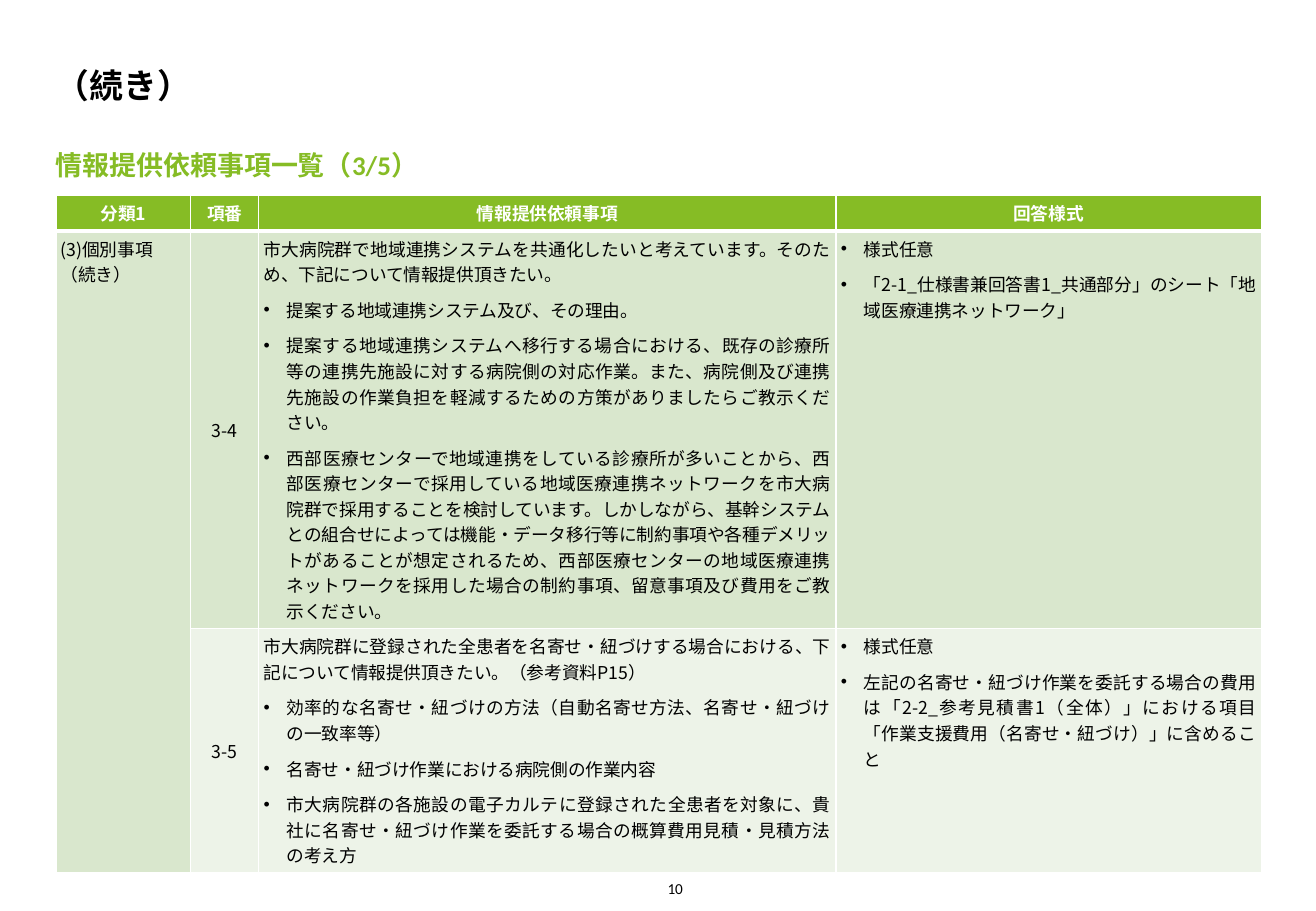
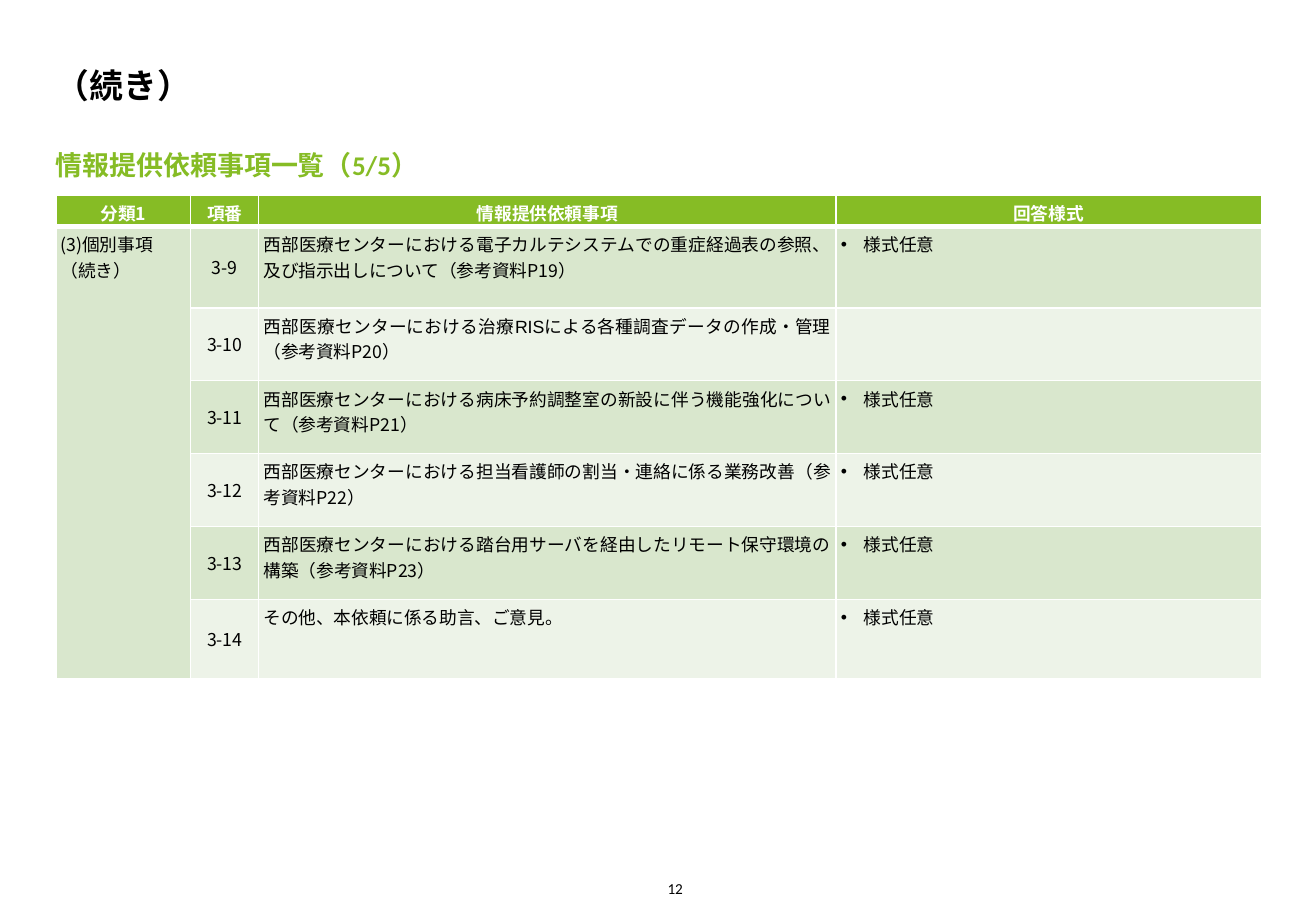
from lxml.etree import SubElement
from pptx import Presentation
from pptx.dml.color import RGBColor
from pptx.enum.text import MSO_ANCHOR as Anchor, PP_ALIGN as Align
from pptx.oxml.ns import qn
from pptx.util import Pt

# Content: each row is (number, (Arial lead, main text), bullets, answer formats)
TITLE = "（続き）"
HEADERS = ["分類1", "項番", "情報提供依頼事項", "回答様式"]
CATEGORY = ["(3)個別事項", "（続き）"]
FREE = "様式任意"

SLIDES = [
    dict(
        subtitle="情報提供依頼事項一覧（3/5）", page="10", heights=[24, 263, 185],
        rows=[
            ("3-4",
             ("", "市大病院群で地域連携システムを共通化したいと考えています。そのため、下記について情報提供頂きたい。"),
             ["提案する地域連携システム及び、その理由。",
              "提案する地域連携システムへ移行する場合における、既存の診療所等の連携先施設に対する病院側の対応作業。"
              "また、病院側及び連携先施設の作業負担を軽減するための方策がありましたらご教示ください。",
              "西部医療センターで地域連携をしている診療所が多いことから、西部医療センターで採用している"
              "地域医療連携ネットワークを市大病院群で採用することを検討しています。しかしながら、"
              "基幹システムとの組合せによっては機能・データ移行等に制約事項や各種デメリットがあることが想定されるため、"
              "西部医療センターの地域医療連携ネットワークを採用した場合の制約事項、留意事項及び費用をご教示ください。"],
             [FREE, "「2-1_仕様書兼回答書1_共通部分」のシート「地域医療連携ネットワーク」"]),
            ("3-5",
             ("", "市大病院群に登録された全患者を名寄せ・紐づけする場合における、下記について情報提供頂きたい。（参考資料P15）"),
             ["効率的な名寄せ・紐づけの方法（自動名寄せ方法、名寄せ・紐づけの一致率等）",
              "名寄せ・紐づけ作業における病院側の作業内容",
              "市大病院群の各施設の電子カルテに登録された全患者を対象に、"
              "貴社に名寄せ・紐づけ作業を委託する場合の概算費用見積・見積方法の考え方"],
             [FREE, "左記の名寄せ・紐づけ作業を委託する場合の費用は「2-2_参考見積書1（全体）」における項目"
                    "「作業支援費用（名寄せ・紐づけ）」に含めること"]),
        ]),
    dict(
        subtitle="情報提供依頼事項一覧（5/5）", page="12",
        heights=[24, 67, 60, 60, 60, 60, 65],
        rows=[
            ("3-9", ("西部医療センターにおける電子カルテシステムでの重症経過表の参照、及び指示出しについて",
                     "（参考資料P19）"), [], [FREE]),
            ("3-10", ("西部医療センターにおける治療RISによる各種調査データの作成・管理",
                      "（参考資料P20）"), [], []),
            ("3-11", ("西部医療センターにおける病床予約調整室の新設に伴う機能強化について",
                      "（参考資料P21）"), [], [FREE]),
            ("3-12", ("西部医療センターにおける担当看護師の割当・連絡に係る業務改善",
                      "（参考資料P22）"), [], [FREE]),
            ("3-13", ("西部医療センターにおける踏台用サーバを経由したリモート保守環境の構築",
                      "（参考資料P23）"), [], [FREE]),
            ("3-14", ("", "その他、本依頼に係る助言、ご意見。"), [], [FREE]),
        ]),
]

# Shared style
GREEN, BLACK, WHITE = "86BC25", "000000", "FFFFFF"
BANDS = ["D9E7CD", "EDF3E8"]
CJK, LATIN, LEAD = "Noto Sans CJK JP", "Calibri", "Arial"
LEFT, TABLE_TOP, WIDTH = 46, 161, 992
COLS = [111, 56, 475, 350]
CELL_PT, PAD, INDENT = 10.5, 4, 19


def px(n):
    return n * 9144  # 100 px to the inch


def rgb(color):
    return RGBColor.from_string(color)


def style_run(r, size, color, font=CJK, bold=False):
    f = r.font
    f.size, f.bold, f.name = Pt(size), bold, font
    f.color.rgb = rgb(color)
    SubElement(r._r.get_or_add_rPr(), qn("a:ea"), typeface=CJK)


def add_text(s, text, box, size, color, anchor, bold=False, align=Align.LEFT):
    tf = s.shapes.add_textbox(*map(px, box)).text_frame
    tf.word_wrap = True
    tf.vertical_anchor = anchor
    tf.margin_left = tf.margin_right = tf.margin_top = tf.margin_bottom = 0
    p = tf.paragraphs[0]
    p.text, p.alignment = text, align
    style_run(p.runs[0], size, color, LATIN, bold)


def add_bullet(p):
    pPr = p._p.get_or_add_pPr()
    pPr.set("marL", str(px(INDENT)))
    pPr.set("indent", str(-px(INDENT)))
    SubElement(pPr, qn("a:buFont"), typeface="Arial")
    SubElement(pPr, qn("a:buChar"), char="•")


def format_cell(cell, fill, row, anchor=Anchor.TOP):
    cell.margin_left = cell.margin_right = px(PAD)
    cell.margin_top = cell.margin_bottom = px(PAD)
    cell.vertical_anchor = anchor
    tcPr = cell._tc.get_or_add_tcPr()
    heavy = {0: "lnB", 1: "lnT"}.get(row)  # thick rule below the header
    for side in ("lnL", "lnR", "lnT", "lnB"):
        ln = SubElement(tcPr, qn("a:" + side), w=str(Pt(3 if side == heavy else 1)))
        SubElement(SubElement(ln, qn("a:solidFill")), qn("a:srgbClr"), val=WHITE)
    cell.fill.solid()
    cell.fill.fore_color.rgb = rgb(fill)


def fill_cell(cell, paragraphs, align, color=BLACK, bold=False, gap=6):
    """paragraphs: list of (runs, bulleted), runs being (text, font) pairs."""
    tf = cell.text_frame
    for i, (runs, bulleted) in enumerate(paragraphs):
        p = tf.add_paragraph() if i else tf.paragraphs[0]
        p.alignment = align
        if bulleted:
            add_bullet(p)
        if i and gap:
            p.space_before = Pt(gap)
        for text, font in runs:
            r = p.add_run()
            r.text = text
            style_run(r, CELL_PT, color, font, bold)


def lines(texts, bulleted=False):
    return [([(t, CJK)], bulleted) for t in texts]


def add_request_table(s, rows, heights):
    frame = s.shapes.add_table(len(heights), len(COLS), px(LEFT), px(TABLE_TOP),
                               px(WIDTH), px(sum(heights)))
    table = frame.table
    table.first_row = table.horz_banding = False
    for col, w in zip(table.columns, COLS):
        col.width = px(w)
    for row, h in zip(table.rows, heights):
        row.height = px(h)

    # Header
    for c, text in enumerate(HEADERS):
        cell = table.cell(0, c)
        format_cell(cell, GREEN, 0, Anchor.MIDDLE)
        fill_cell(cell, lines([text]), Align.CENTER, WHITE, True)

    # Body, banded from the second column on
    for i, (number, (lead, main), bullets, answers) in enumerate(rows, 1):
        category, num, request, answer = (table.cell(i, c) for c in range(len(COLS)))
        band = BANDS[(i - 1) % 2]
        format_cell(category, BANDS[0], i)
        format_cell(num, band, i, Anchor.MIDDLE)
        format_cell(request, band, i)
        format_cell(answer, band, i)
        intro = [run for run in ((lead, LEAD), (main, CJK)) if run[0]]
        fill_cell(num, lines([number]), Align.CENTER)
        fill_cell(request, [(intro, False)] + lines(bullets, True), Align.JUSTIFY)
        fill_cell(answer, lines(answers, True), Align.JUSTIFY)

    # Category spans every body row
    table.cell(1, 0).merge(table.cell(len(rows), 0))
    fill_cell(table.cell(1, 0), lines(CATEGORY), Align.LEFT, gap=0)


def main():
    prs = Presentation()
    prs.slide_width, prs.slide_height = px(1083), px(750)
    for data in SLIDES:
        s = prs.slides.add_slide(prs.slide_layouts[6])
        add_request_table(s, data["rows"], data["heights"])
        add_text(s, data["page"], (542, 720, 20, 19), 9, BLACK, Anchor.BOTTOM,
                 align=Align.RIGHT)
        add_text(s, data["subtitle"], (LEFT, 110, 476, 51), 16, GREEN, Anchor.MIDDLE, True)
        add_text(s, TITLE, (LEFT, 20, WIDTH, 67), 20, BLACK, Anchor.BOTTOM, True)
    prs.save("out.pptx")


if __name__ == "__main__":
    main()
